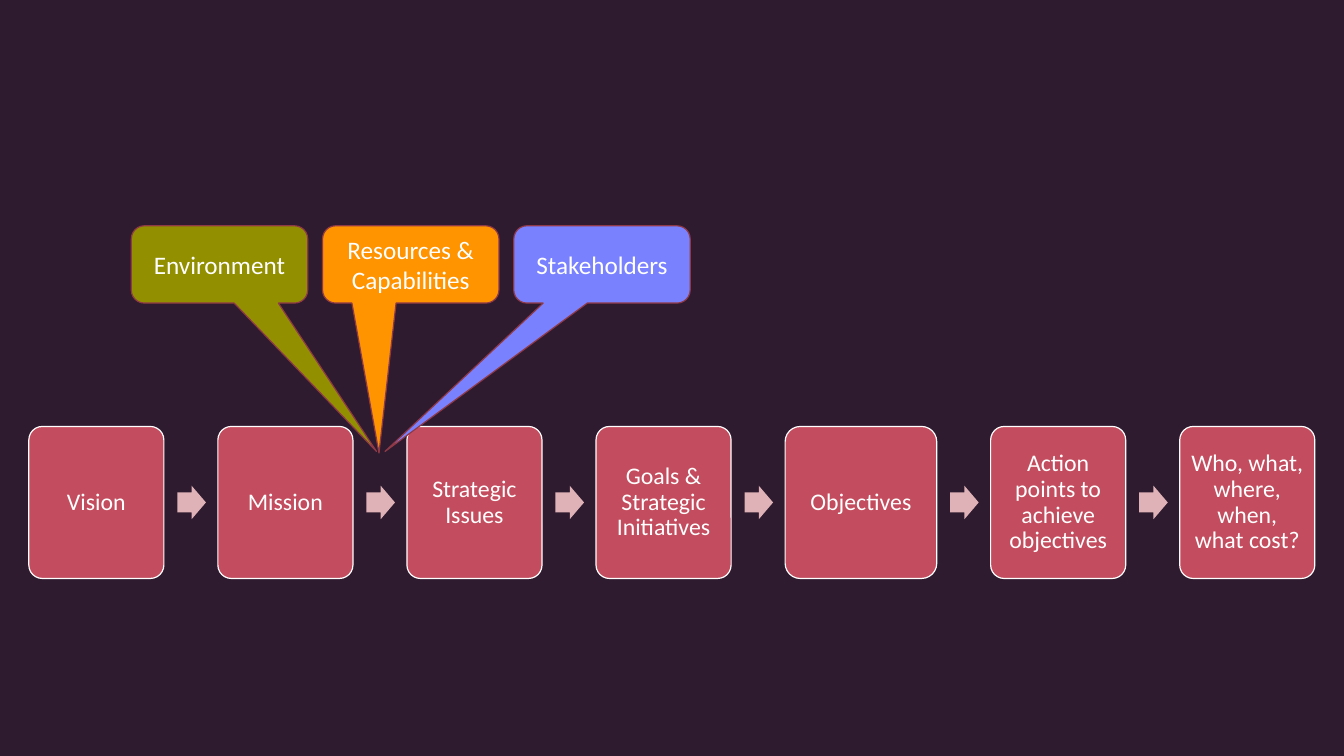
from pptx import Presentation
from pptx.dml.color import RGBColor
from pptx.enum.shapes import MSO_SHAPE
from pptx.enum.text import MSO_ANCHOR, PP_ALIGN
from pptx.util import Pt

COLORS = {
    "background": "2F1B2F",
    "step": "C34D5E",
    "arrow": "DEB2B6",
    "white": "FFFFFF",
    "callout_line": "903946",
    "olive": "929000",
    "orange": "FF9300",
    "periwinkle": "7A81FF",
}

STEPS = [
    ("Vision", 96.5),
    ("Mission", 96.5),
    ("Strategic Issues", 96.5),
    ("Goals & Strategic Initiatives", 96.5),
    ("Objectives", 108.3),
    ("Action points to achieve objectives", 96.5),
    ("Who, what, where, when, what cost?", 96.5),
]
STEP_LEFT, STEP_TOP, STEP_HEIGHT, STEP_GAP = 20.6, 304.6, 108.6, 38.55
ARROW_OFFSET, ARROW_WIDTH, ARROW_HEIGHT = 9.6, 20.4, 23.9

INFLUENCES = [
    ("Environment", "olive", (0.89, 2.42, 0.17)),
    ("Resources & Capabilities", "orange", (-0.18, 2.44, 0.17)),
    ("Stakeholders", "periwinkle", (-1.23, 2.42, 0.17)),
]
INFLUENCE_LEFT, INFLUENCE_TOP, INFLUENCE_PITCH = 93.8, 161.3, 136.6
INFLUENCE_WIDTH, INFLUENCE_HEIGHT = 126, 55.2


class PlanningSlide:
    """Draws the planning process on one slide in a shared style."""

    def __init__(self, slide, font="Calibri", line_width=0.85):
        self.slide = slide
        self.font = font
        self.line_width = line_width
        background = slide.background.fill
        background.solid()
        background.fore_color.rgb = self.color("background")

    def color(self, key):
        return RGBColor.from_string(COLORS[key])

    def block(self, preset, box, adjustments, fill, line=None):
        block = self.slide.shapes.add_shape(preset, *map(Pt, box))
        block.shadow.inherit = False
        for index, value in enumerate(adjustments):
            block.adjustments[index] = value
        block.fill.solid()
        block.fill.fore_color.rgb = self.color(fill)
        if line:
            block.line.color.rgb = self.color(line)
            block.line.width = Pt(self.line_width)
        else:
            block.line.fill.background()
        return block

    def label(self, block, wording, size, margins, spacing=1.0):
        frame = block.text_frame
        frame.word_wrap = True
        frame.vertical_anchor = MSO_ANCHOR.MIDDLE
        frame.margin_left = frame.margin_right = Pt(margins[0])
        frame.margin_top = frame.margin_bottom = Pt(margins[1])
        paragraph = frame.paragraphs[0]
        paragraph.alignment = PP_ALIGN.CENTER
        paragraph.line_spacing = spacing
        run = paragraph.add_run()
        run.text = wording
        run.font.name = self.font
        run.font.size = Pt(size)
        run.font.color.rgb = self.color("white")

    def step(self, wording, left, width):
        box = (left, STEP_TOP, width, STEP_HEIGHT)
        block = self.block(MSO_SHAPE.ROUNDED_RECTANGLE, box, [0.1], "step", "white")
        self.label(block, wording, 17, (5, 5), 0.9)

    def arrow(self, left):
        top = STEP_TOP + (STEP_HEIGHT - ARROW_HEIGHT) / 2
        box = (left, top, ARROW_WIDTH, ARROW_HEIGHT)
        self.block(MSO_SHAPE.RIGHT_ARROW, box, [0.6, 0.5], "arrow")

    def influence(self, wording, left, fill, pointer):
        box = (left, INFLUENCE_TOP, INFLUENCE_WIDTH, INFLUENCE_HEIGHT)
        preset = MSO_SHAPE.ROUNDED_RECTANGULAR_CALLOUT
        block = self.block(preset, box, pointer, fill, "callout_line")
        self.label(block, wording, 18, (7.2, 3.6))


def main():
    presentation = Presentation()
    presentation.slide_width, presentation.slide_height = Pt(960), Pt(540)
    planning = PlanningSlide(
        presentation.slides.add_slide(presentation.slide_layouts[6])
    )

    left = STEP_LEFT
    for position, (wording, width) in enumerate(STEPS):
        if position:
            planning.arrow(left - STEP_GAP + ARROW_OFFSET)
        planning.step(wording, left, width)
        left += width + STEP_GAP

    for position, (wording, fill, pointer) in enumerate(INFLUENCES):
        left = INFLUENCE_LEFT + position * INFLUENCE_PITCH
        planning.influence(wording, left, fill, pointer)

    presentation.save("out.pptx")


if __name__ == "__main__":
    main()
